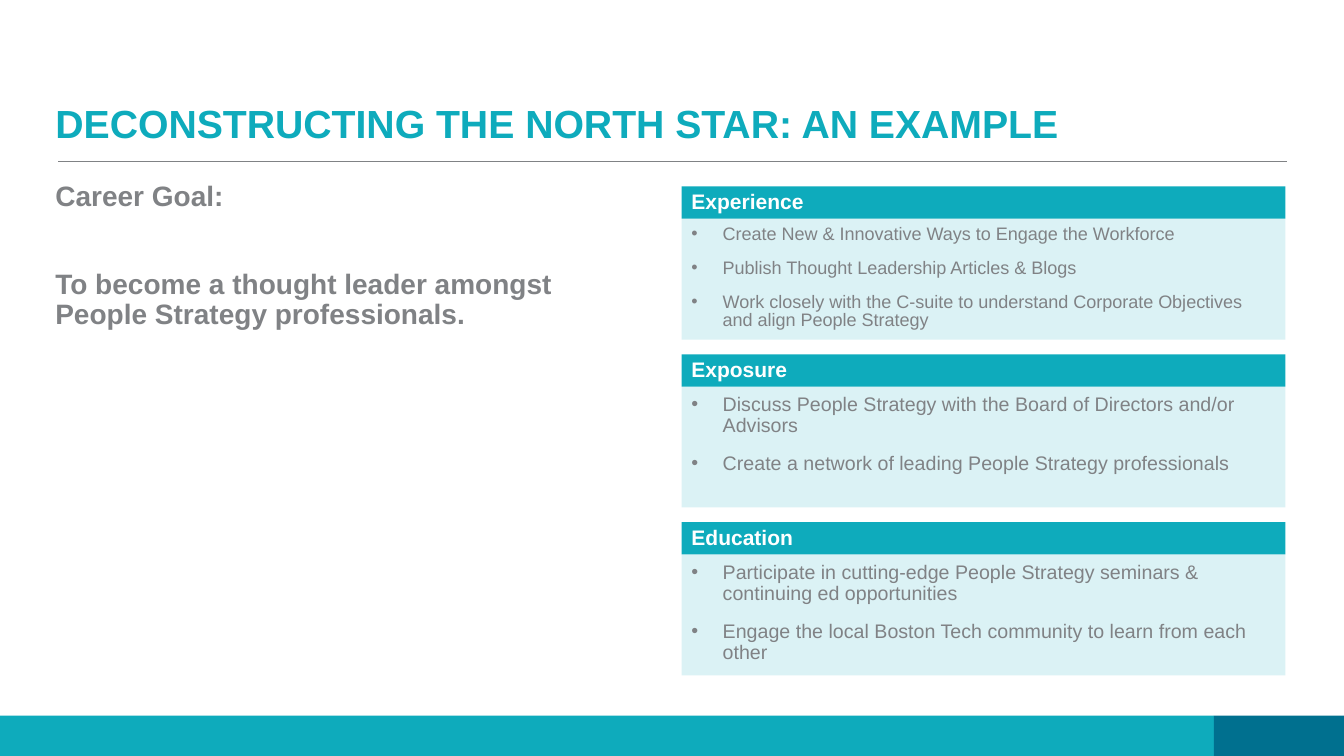
from lxml import etree
from pptx import Presentation
from pptx import util as u
from pptx.dml.color import RGBColor
from pptx.enum import shapes, text
from pptx.oxml import ns

COLORS = {"teal": "0EABBC", "navy": "00708F", "pale": "DBF2F5",
          "gray": "808285", "white": "FFFFFF"}

DEVELOPMENT_AREAS = [
    ("Experience", 12.9, 0.8, [
        "Create New & Innovative Ways to Engage the Workforce",
        "Publish Thought Leadership Articles & Blogs",
        "Work closely with the C-suite to understand Corporate Objectives and align People Strategy"]),
    ("Exposure", 14, 0.9, [
        "Discuss People Strategy with the Board of Directors and/or Advisors",
        "Create a network of leading People Strategy professionals"]),
    ("Education", 14, 0.9, [
        "Participate in cutting-edge People Strategy seminars & continuing ed opportunities",
        "Engage the local Boston Tech community to learn from each other"]),
]


def rgb(name):
    return RGBColor.from_string(COLORS[name])


def add_bar(slide, left, top, width, height, color):
    bar = slide.shapes.add_shape(
        shapes.MSO_SHAPE.RECTANGLE, *map(u.Inches, (left, top, width, height)))
    bar.shadow.inherit = False
    bar.fill.solid()
    bar.fill.fore_color.rgb = rgb(color)
    bar.line.fill.background()
    return bar


def write(frame, lines, size, color, bold=False, spacing=0.9, before=0, bullet=False,
          anchor=text.MSO_ANCHOR.TOP, inset_top=0.05):
    frame.word_wrap = True
    frame.auto_size = text.MSO_AUTO_SIZE.NONE
    frame.vertical_anchor = anchor
    frame.margin_left = frame.margin_right = u.Inches(0.1)
    frame.margin_top, frame.margin_bottom = u.Inches(inset_top), u.Inches(0.05)
    for index, line in enumerate(lines):
        paragraph = frame.add_paragraph() if index else frame.paragraphs[0]
        paragraph.alignment = text.PP_ALIGN.LEFT
        paragraph.line_spacing = spacing
        paragraph.space_before = u.Pt(before if index else 0)
        if bullet:
            properties = paragraph._p.get_or_add_pPr()
            properties.set("marL", str(u.Inches(0.31)))
            properties.set("indent", str(-u.Inches(0.31)))
            etree.SubElement(properties, ns.qn("a:buFont")).set("typeface", "Arial")
            etree.SubElement(properties, ns.qn("a:buChar")).set("char", "•")
        run = paragraph.add_run()
        run.text = line
        run.font.name = "Arial"
        run.font.size = u.Pt(size)
        run.font.bold = bold
        run.font.color.rgb = rgb(color)


def add_footer(slide, left, top, width, height):
    corner = 1.29
    add_bar(slide, left, top, width - corner, height, "teal")
    add_bar(slide, left + width - corner, top, corner, height, "navy")


def add_heading(slide, left, top, width, height):
    title = slide.shapes.title
    title.left, title.top, title.width, title.height = map(
        u.Inches, (left, top, width, height))
    write(title.text_frame, ["DECONSTRUCTING THE NORTH STAR: AN EXAMPLE"], 28, "teal",
          bold=True, anchor=text.MSO_ANCHOR.BOTTOM)
    rule_y = top + height + 0.09
    rule = slide.shapes.add_connector(
        shapes.MSO_CONNECTOR.STRAIGHT,
        *map(u.Inches, (left + 0.13, rule_y, left + width - 0.12, rule_y)))
    rule.line.color.rgb = rgb("gray")
    rule.line.width = u.Pt(0.5)
    etree.SubElement(rule._element.spPr, ns.qn("a:effectLst"))


def add_career_goal(slide, left, top, width, height):
    goal = slide.shapes.add_textbox(*map(u.Inches, (left, top, width, height)))
    write(goal.text_frame,
          ["Career Goal:", "To become a thought leader amongst People Strategy professionals."],
          20, "gray", bold=True, before=41)


def add_development_areas(slide, left, top, width, height):
    header_height, body_height = 0.32, 1.2
    count = len(DEVELOPMENT_AREAS)
    area_height = header_height + body_height
    pitch = (height - area_height) / (count - 1)
    for index, (name, size, spacing, actions) in enumerate(DEVELOPMENT_AREAS):
        area_top = top + index * pitch
        body = add_bar(slide, left, area_top + header_height, width, body_height, "pale")
        write(body.text_frame, actions, size, "gray", spacing=spacing, before=12,
              bullet=True, inset_top=0.08)
        header = add_bar(slide, left, area_top, width, header_height, "teal")
        write(header.text_frame, [name], 15, "white", bold=True,
              anchor=text.MSO_ANCHOR.MIDDLE)


def main():
    deck = Presentation()
    deck.slide_width, deck.slide_height = u.Inches(13.33), u.Inches(7.5)
    slide = deck.slides.add_slide(deck.slide_layouts[5])
    add_footer(slide, 0, 7.1, 13.33, 0.4)
    add_heading(slide, 0.45, 0.4, 12.43, 1.11)
    add_career_goal(slide, 0.45, 1.76, 6.01, 4.93)
    add_development_areas(slide, 6.76, 1.85, 5.99, 4.85)
    deck.save("out.pptx")


if __name__ == "__main__":
    main()
